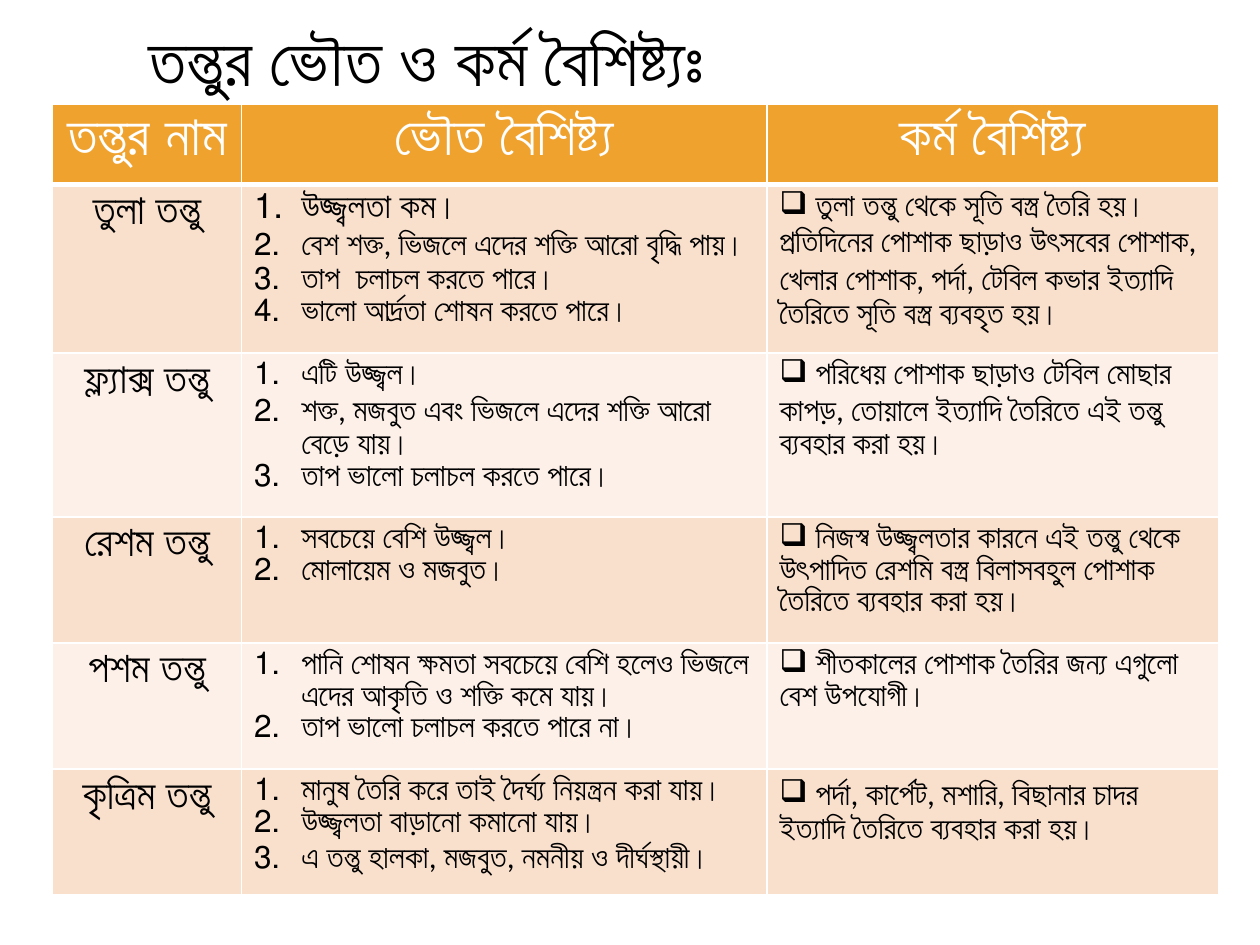
from dataclasses import dataclass

from lxml import etree
from pptx import Presentation, util as u
from pptx.dml.color import RGBColor
from pptx.enum import text
from pptx.oxml.ns import qn


@dataclass(frozen=True)
class Theme:
    font: str = "Calibri"
    ink: str = "000000"
    white: str = "FFFFFF"
    header: str = "F0A22E"
    bands: tuple = ("F9E0CD", "FCF0E8")
    title_size: int = 40
    header_size: int = 32
    name_size: int = 24
    lead_size: int = 20
    body_size: int = 18


THEME = Theme()
TITLE = "তন্তুর ভৌত ও কর্ম বৈশিষ্ট্যঃ"
HEADINGS = ("তন্তুর নাম", "ভৌত বৈশিষ্ট্য", "কর্ম বৈশিষ্ট্য")
COLUMN_WIDTHS = (3.81, 10.59, 9.1)
ROW_HEIGHTS = (1.57, 3.4, 3.3, 2.54, 2.54, 2.54)
NUMBER_INDENT = u.Cm(0.95)

# Fibre name, physical properties, functional properties
FIBRES = (
    ("তুলা তন্তু",
     ("উজ্জ্বলতা কম।",
      "বেশ শক্ত, ভিজলে এদের শক্তি আরো বৃদ্ধি পায়।",
      "তাপ  চলাচল করতে পারে।",
      "ভালো আর্দ্রতা শোষন করতে পারে।"),
     " তুলা তন্তু থেকে সূতি বস্ত্র তৈরি হয়। প্রতিদিনের পোশাক ছাড়াও উৎসবের পোশাক, "
     "খেলার পোশাক, পর্দা, টেবিল কভার ইত্যাদি তৈরিতে সূতি বস্ত্র ব্যবহৃত হয়।"),
    ("ফ্ল্যাক্স তন্তু",
     ("এটি উজ্জ্বল।",
      "শক্ত, মজবুত এবং ভিজলে এদের শক্তি আরো বেড়ে যায়।",
      "তাপ ভালো চলাচল করতে পারে।"),
     " পরিধেয় পোশাক ছাড়াও টেবিল মোছার কাপড়, তোয়ালে ইত্যাদি তৈরিতে এই তন্তু "
     "ব্যবহার করা হয়।"),
    ("রেশম তন্তু",
     ("সবচেয়ে বেশি উজ্জ্বল।",
      "মোলায়েম ও মজবুত।"),
     " নিজস্ব উজ্জ্বলতার কারনে এই তন্তু থেকে উৎপাদিত রেশমি বস্ত্র বিলাসবহুল পোশাক "
     "তৈরিতে ব্যবহার করা হয়।"),
    ("পশম তন্তু",
     ("পানি শোষন ক্ষমতা সবচেয়ে বেশি হলেও ভিজলে এদের আকৃতি ও শক্তি কমে যায়।",
      "তাপ ভালো চলাচল করতে পারে না।"),
     " শীতকালের পোশাক তৈরির জন্য এগুলো বেশ উপযোগী।"),
    ("কৃত্রিম তন্তু",
     ("মানুষ তৈরি করে তাই দৈর্ঘ্য নিয়ন্ত্রন করা যায়।",
      "উজ্জ্বলতা বাড়ানো কমানো যায়।",
      "এ তন্তু হালকা, মজবুত, নমনীয় ও দীর্ঘস্থায়ী।"),
     " পর্দা, কার্পেট, মশারি, বিছানার চাদর ইত্যাদি তৈরিতে ব্যবহার করা হয়।"),
)


def style_paragraph(paragraph, size, color=THEME.ink, bold=False, centred=False):
    if centred:
        paragraph.alignment = text.PP_ALIGN.CENTER
    font = paragraph.font
    font.name, font.size, font.bold = THEME.font, u.Pt(size), bold
    font.color.rgb = RGBColor.from_string(color)


def add_bullet(paragraph, typeface, tag, indent=0, **attributes):
    properties = paragraph._p.get_or_add_pPr()
    properties.set("marL", str(indent))
    properties.set("indent", str(-indent))
    etree.SubElement(properties, qn("a:buFont"), typeface=typeface)
    etree.SubElement(properties, qn("a:" + tag), **attributes)


def paint_cell(cell, color, bottom=1):
    """Draw white borders, with the bottom one in points, and fill the cell."""
    properties = cell._tc.get_or_add_tcPr()
    for side, points in (("L", 1), ("R", 1), ("T", 1), ("B", bottom)):
        line = etree.SubElement(properties, qn("a:ln" + side), w=str(u.Pt(points)))
        fill = etree.SubElement(line, qn("a:solidFill"))
        etree.SubElement(fill, qn("a:srgbClr"), val=THEME.white)
    cell.fill.solid()
    cell.fill.fore_color.rgb = RGBColor.from_string(color)


def add_title(slide, left, top, width, height):
    frame = slide.shapes.add_textbox(left, top, width, height).text_frame
    frame.word_wrap = True
    frame.auto_size = text.MSO_AUTO_SIZE.SHAPE_TO_FIT_TEXT
    frame.text = TITLE
    style_paragraph(frame.paragraphs[0], THEME.title_size)


def fill_header(table):
    for cell, heading in zip(table.rows[0].cells, HEADINGS):
        paint_cell(cell, THEME.header, bottom=3)
        cell.text = heading
        style_paragraph(cell.text_frame.paragraphs[0], THEME.header_size,
                        THEME.white, bold=True, centred=True)


def fill_fibre_row(row, fibre, band, lead_size):
    """Fill one fibre; lead_size is the size of its first numbered line."""
    name, properties, usage = fibre
    name_cell, property_cell, usage_cell = row.cells
    for cell in row.cells:
        paint_cell(cell, band)

    name_cell.text = name
    style_paragraph(name_cell.text_frame.paragraphs[0], THEME.name_size, centred=True)

    property_cell.text = "\n".join(properties)
    for index, paragraph in enumerate(property_cell.text_frame.paragraphs):
        add_bullet(paragraph, "Arial", "buAutoNum", NUMBER_INDENT, type="arabicPeriod")
        style_paragraph(paragraph, THEME.body_size if index else lead_size)

    usage_cell.text = usage
    paragraph = usage_cell.text_frame.paragraphs[0]
    add_bullet(paragraph, "Wingdings", "buChar", char="q")
    style_paragraph(paragraph, THEME.body_size)


def add_fibre_table(slide, left, top, width, height):
    table = slide.shapes.add_table(len(ROW_HEIGHTS), len(HEADINGS),
                                   left, top, width, height).table
    for column, column_width in zip(table.columns, COLUMN_WIDTHS):
        column.width = u.Cm(column_width)
    for row, row_height in zip(table.rows, ROW_HEIGHTS):
        row.height = u.Cm(row_height)
    fill_header(table)
    for index, fibre in enumerate(FIBRES):
        lead_size = THEME.body_size if index else THEME.lead_size
        fill_fibre_row(table.rows[index + 1], fibre, THEME.bands[index % 2], lead_size)


def main():
    presentation = Presentation()
    presentation.slide_width, presentation.slide_height = u.Cm(25.4), u.Cm(19.05)
    slide = presentation.slides.add_slide(presentation.slide_layouts[6])
    add_title(slide, u.Cm(2.74), u.Cm(0.2), u.Cm(20.12), u.Cm(1.96))
    add_fibre_table(slide, u.Cm(1.06), u.Cm(2.11),
                    u.Cm(sum(COLUMN_WIDTHS)), u.Cm(sum(ROW_HEIGHTS)))
    presentation.save("out.pptx")


if __name__ == "__main__":
    main()
